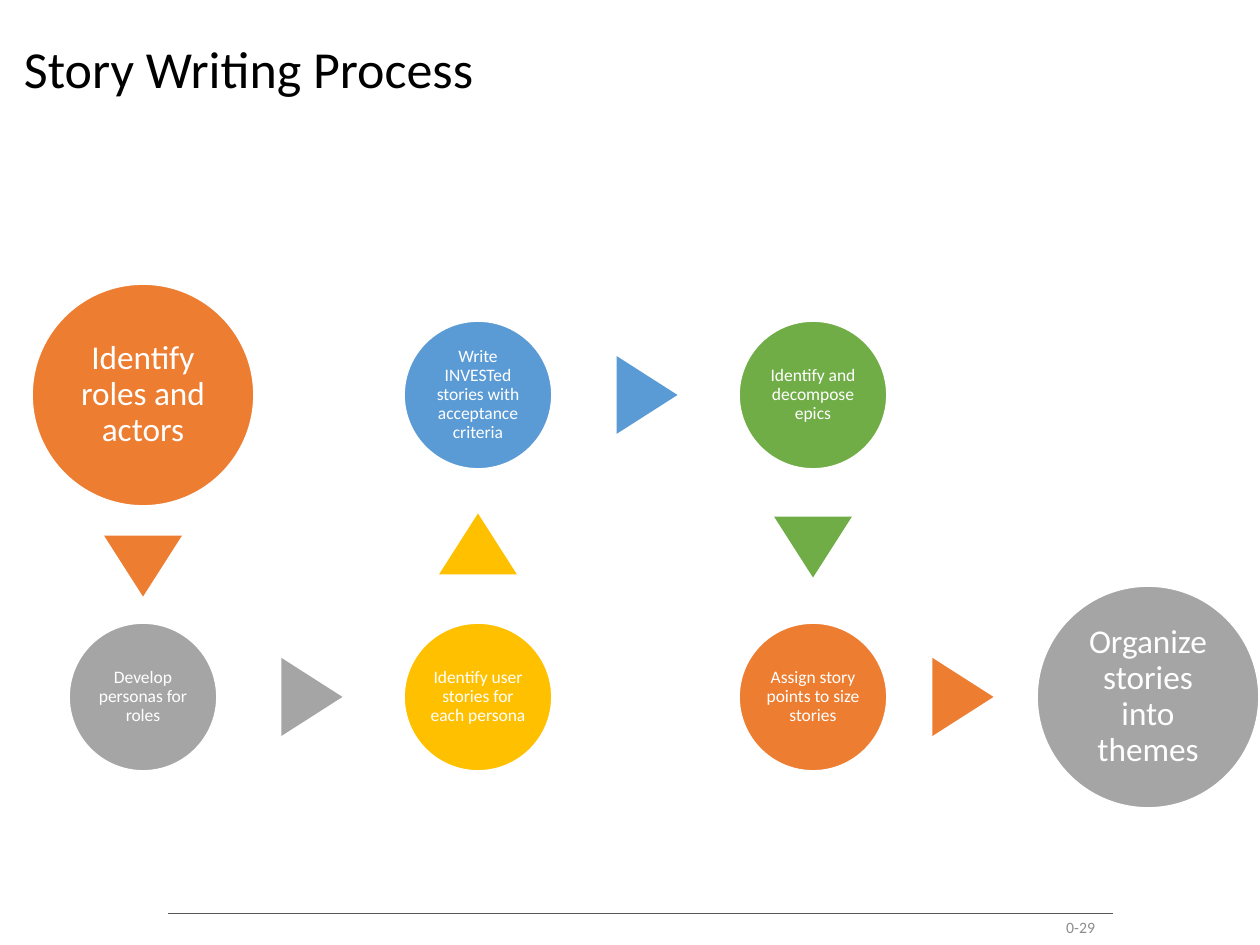
"""Build the Story Writing Process slide: a chain of circles joined by triangles."""
from lxml import etree
from pptx import Presentation
from pptx.dml.color import RGBColor
from pptx.enum.shapes import MSO_CONNECTOR, MSO_SHAPE
from pptx.enum.text import MSO_ANCHOR, PP_ALIGN
from pptx.oxml.ns import qn
from pptx.util import Emu, Pt

OVAL, TRIANGLE = MSO_SHAPE.OVAL, MSO_SHAPE.ISOSCELES_TRIANGLE
STRAIGHT = MSO_CONNECTOR.STRAIGHT
MIDDLE = MSO_ANCHOR.MIDDLE
LEFT, CENTER, RIGHT = PP_ALIGN.LEFT, PP_ALIGN.CENTER, PP_ALIGN.RIGHT

COLORS = {
    "orange": "ED7D31", "gray": "A5A5A5", "yellow": "FFC000",
    "blue": "5B9BD5", "green": "70AD47", "white": "FFFFFF",
    "black": "000000", "number": "8C8C8C", "rule": "595959",
}
COL_X = [143 + 335 * col for col in range(4)]
ROW_Y = [395, 697]
BIG, SMALL = (222, 19, 4), (148, 10, 1)
TRI_W, TRI_H = 78, 61
DOWN, RIGHTWARD, UP = 180, 90, 0


def px(n):
    return Emu(round(n * 914400 / 126))


def write(sp, text, size, color, align, spacing, inset_x, inset_y):
    tf = sp.text_frame
    tf.word_wrap = True
    tf.vertical_anchor = MIDDLE
    tf.margin_left = tf.margin_right = px(inset_x)
    tf.margin_top = tf.margin_bottom = px(inset_y)
    p = tf.paragraphs[0]
    p.alignment = align
    p.line_spacing = spacing
    r = p.add_run()
    r.text = text
    r.font.size = Pt(size)
    r.font.name = "Calibri"
    r.font.color.rgb = RGBColor.from_string(COLORS[color])


prs = Presentation()
prs.slide_width, prs.slide_height = px(1260), px(945)
s = prs.slides.add_slide(prs.slide_layouts[6])

rule = s.shapes.add_connector(STRAIGHT, px(168), px(913), px(1113), px(913))
rule.line.color.rgb = RGBColor.from_string(COLORS["rule"])
rule.line.width = Pt(0.5)
etree.SubElement(rule._element.spPr, qn("a:effectLst"))

title = s.shapes.add_textbox(px(11), px(43), px(1249), px(58))
write(title, "Story Writing Process", 29.7, "black", LEFT, 0.9, 13, 6)

steps = [
    ("Identify roles and actors", 0, 0, BIG, "orange"),
    ("Develop personas for roles", 0, 1, SMALL, "gray"),
    ("Identify user stories for each persona", 1, 1, SMALL, "yellow"),
    ("Write INVESTed stories with acceptance criteria", 1, 0, SMALL, "blue"),
    ("Identify and decompose epics", 2, 0, SMALL, "green"),
    ("Assign story points to size stories", 2, 1, SMALL, "orange"),
    ("Organize stories into themes", 3, 1, BIG, "gray"),
]
for text, col, row, (d, size, inset), color in steps:
    sp = s.shapes.add_shape(OVAL, px(COL_X[col] - d / 2), px(ROW_Y[row] - d / 2), px(d), px(d))
    sp.shadow.inherit = False
    sp.fill.solid()
    sp.fill.fore_color.rgb = RGBColor.from_string(COLORS[color])
    sp.line.color.rgb = RGBColor.from_string(COLORS["white"])
    sp.line.width = Pt(1)
    write(sp, text, size, "white", CENTER, 0.9, inset, inset)

arrows = [
    (COL_X[0], 566, DOWN, "orange"),
    (312, ROW_Y[1], RIGHTWARD, "gray"),
    (COL_X[1], 544, UP, "yellow"),
    (647, ROW_Y[0], RIGHTWARD, "blue"),
    (COL_X[2], 547, DOWN, "green"),
    (963, ROW_Y[1], RIGHTWARD, "orange"),
]
for x, y, angle, color in arrows:
    sp = s.shapes.add_shape(TRIANGLE, px(x - TRI_W / 2), px(y - TRI_H / 2), px(TRI_W), px(TRI_H))
    sp.rotation = angle
    sp.shadow.inherit = False
    sp.fill.solid()
    sp.fill.fore_color.rgb = RGBColor.from_string(COLORS[color])
    sp.line.fill.background()

number = s.shapes.add_textbox(px(1023), px(902), px(85), px(50))
write(number, "0-29", 9, "number", RIGHT, 1.0, 13, 6)

prs.save("out.pptx")
